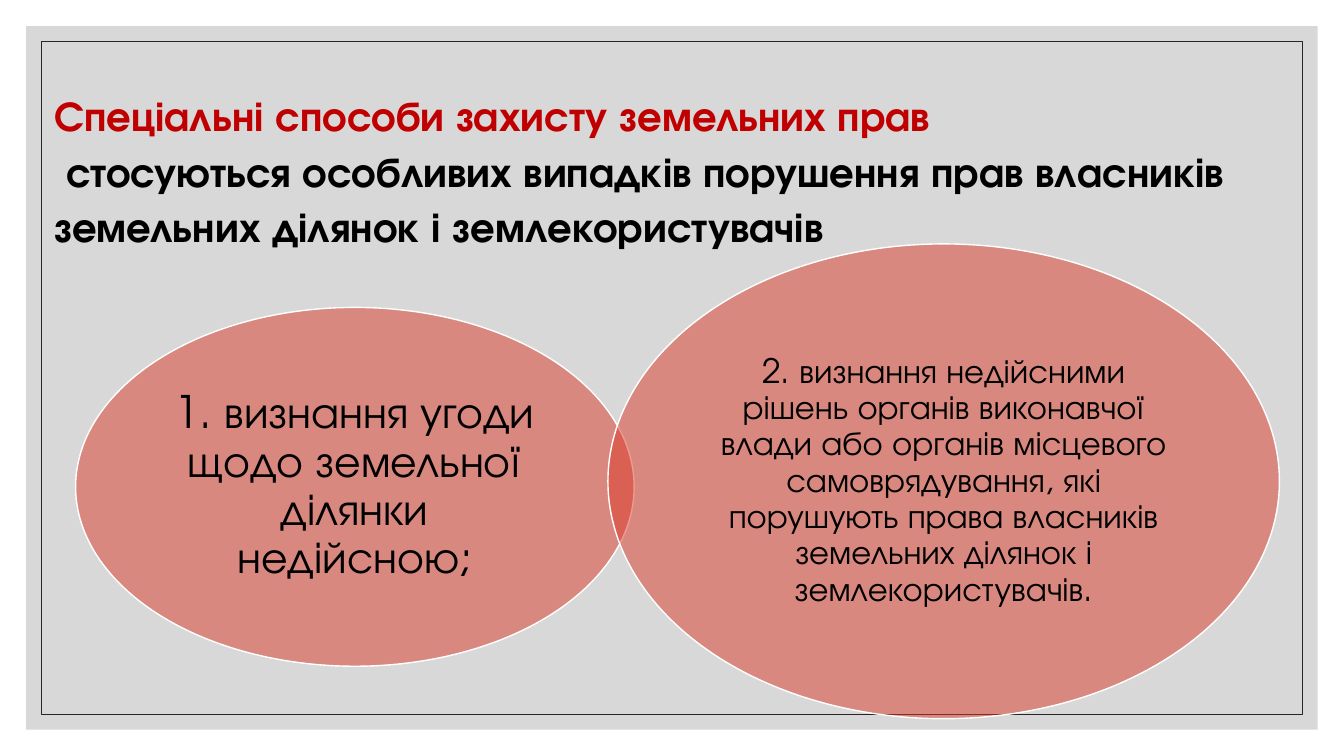
"""Build a slide on special ways of protecting land rights."""
from lxml.etree import SubElement
from pptx import Presentation
from pptx.dml.color import RGBColor
from pptx.enum.shapes import MSO_SHAPE
from pptx.enum.text import MSO_ANCHOR, PP_ALIGN
from pptx.oxml.ns import qn
from pptx.util import Inches, Pt

HEAD = [
    ("Спеціальні способи захисту земельних прав", "red"),
    (" стосуються особливих випадків порушення прав власників "
     "земельних ділянок і землекористувачів", "black"),
]
WAYS = [
    ("1. визнання угоди щодо земельної ділянки недійсною;",
     (0.75, 3.05, 5.54, 3.56), "large"),
    ("2. визнання недійсними рішень органів виконавчої влади або органів "
     "місцевого самоврядування, які порушують права власників земельних "
     "ділянок і землекористувачів.",
     (6.03, 2.42, 6.66, 4.71), "small"),
]
THEME = {
    "font": "TeX Gyre Adventor",
    "color": {"red": "C00000", "black": "000000", "panel": "BFBFBF",
              "frame": "262626", "oval": "DA3927", "edge": "FFFFFF"},
    "size": {"head": 30, "large": 32, "small": 24},
}
WIDE, HIGH = 13.33, 7.5
HEAD_BOX = (0.44, 0.28, 12.26, 2.77)


def put(item, **values):
    for name, value in values.items():
        setattr(item, name, value)


def color(name):
    return RGBColor.from_string(THEME["color"][name])


def place(item, box):
    names = ("left", "top", "width", "height")
    put(item, **dict(zip(names, map(Inches, box))))


def inset(gap):
    return gap, gap, WIDE - 2 * gap, HIGH - 2 * gap


def draw(slide, kind, box, fill=None, alpha=100, line=None, width=1):
    shape = slide.shapes.add_shape(kind, *map(Inches, box))
    shape.shadow.inherit = False
    if fill:
        shape.fill.solid()
        shape.fill.fore_color.rgb = color(fill)
        tint = shape.fill._xPr.find(".//" + qn("a:srgbClr"))
        SubElement(tint, qn("a:alpha"), val=str(alpha * 1000))
    else:
        shape.fill.background()
    if line:
        shape.line.color.rgb = color(line)
        shape.line.width = Pt(width)
    else:
        shape.line.fill.background()
    return shape


def write(para, text, size, tone, bold=False, **layout):
    put(para, **layout)
    run = para.add_run()
    run.text = text
    put(run.font, name=THEME["font"], size=Pt(THEME["size"][size]), bold=bold)
    run.font.color.rgb = color(tone)


def add_head(slide, body):
    slide.shapes._spTree.append(body._element)
    place(body, HEAD_BOX)
    frame = body.text_frame
    put(frame, word_wrap=True, vertical_anchor=MSO_ANCHOR.MIDDLE)
    for i, (text, tone) in enumerate(HEAD):
        para = frame.add_paragraph() if i else frame.paragraphs[0]
        write(para, text, "head", tone, True, line_spacing=1.1,
              space_before=Pt(0), alignment=PP_ALIGN.LEFT)
        props = para._p.get_or_add_pPr()
        props.set("marL", "0")
        props.set("indent", "0")
        SubElement(props, qn("a:buNone"))


def add_way(slide, text, box, size):
    oval = draw(slide, MSO_SHAPE.OVAL, box, "oval", 50, "edge")
    frame = oval.text_frame
    put(frame, word_wrap=True, vertical_anchor=MSO_ANCHOR.MIDDLE,
        margin_left=0, margin_right=0, margin_top=0, margin_bottom=0)
    write(frame.paragraphs[0], text, size, "black", line_spacing=0.9,
          alignment=PP_ALIGN.CENTER)


def main():
    deck = Presentation()
    put(deck, slide_width=Inches(WIDE), slide_height=Inches(HIGH))
    slide = deck.slides.add_slide(deck.slide_layouts[1])
    title, body = slide.placeholders
    title._element.getparent().remove(title._element)
    draw(slide, MSO_SHAPE.RECTANGLE, inset(0.26), "panel", 60)
    draw(slide, MSO_SHAPE.RECTANGLE, inset(0.41), line="frame", width=0.5)
    add_head(slide, body)
    for way in WAYS:
        add_way(slide, *way)
    deck.save("out.pptx")


if __name__ == "__main__":
    main()
